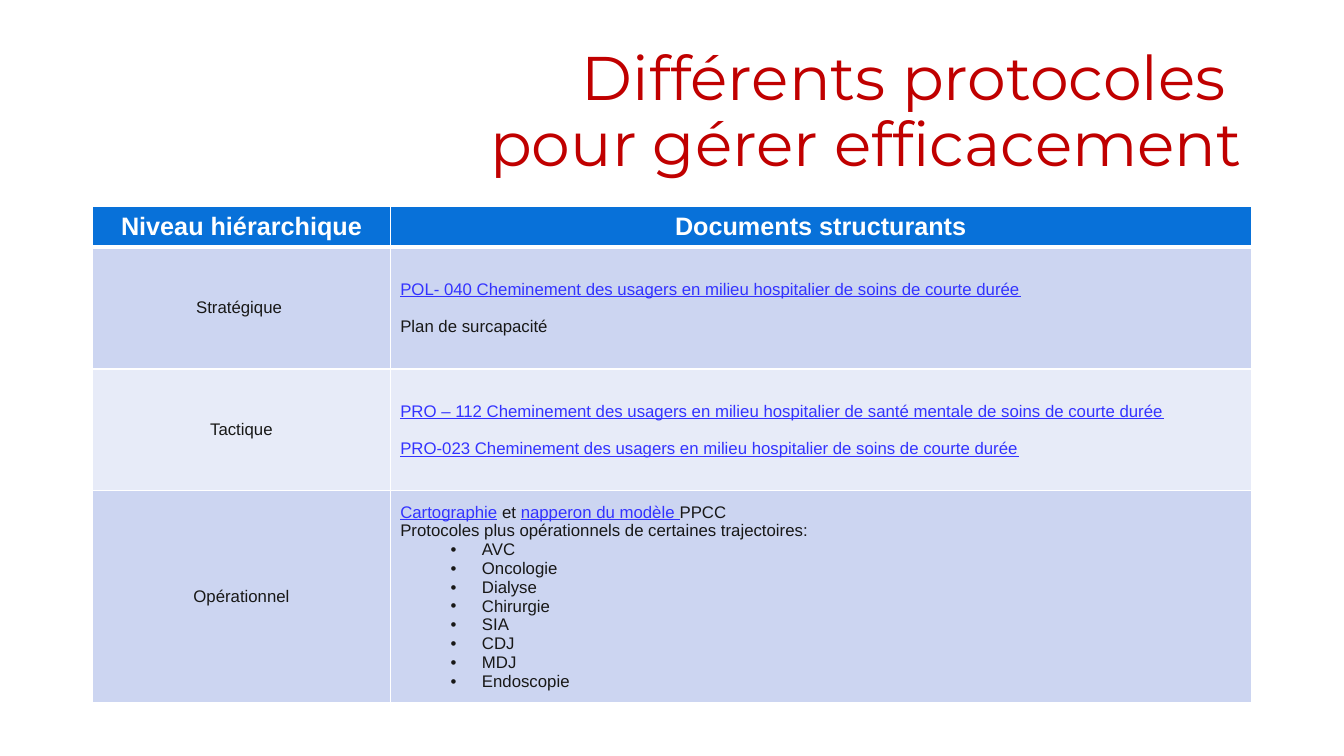
from lxml.etree import SubElement
from pptx import Presentation
from pptx.dml.color import RGBColor
from pptx.enum.text import MSO_ANCHOR as Anchor, PP_ALIGN as Align
from pptx.oxml.ns import qn
from pptx.util import Inches, Pt

HEADER = {"name": "Arial", "size": Pt(18), "bold": True, "color": "FFFFFF"}
BODY = {"name": "Arial", "size": Pt(12), "bold": False, "color": "181817"}
LINK = {**BODY, "color": "3333FF", "underline": True}
TITLE = {"name": "Montserrat", "size": Pt(44), "color": "C00000"}

TRAJECTORIES = ["AVC", "Oncologie", "Dialyse", "Chirurgie",
                "SIA", "CDJ", "MDJ", "Endoscopie"]
LEVELS = [
    ("Stratégique ", "CCD5F1", [
        [("POL- 040 Cheminement des usagers en milieu hospitalier "
          "de soins de courte durée", LINK)],
        [("Plan de surcapacité", BODY)],
    ], Pt(13.4), []),
    ("Tactique", "E7EBF8", [
        [("PRO – 112 Cheminement des usagers en milieu hospitalier "
          "de santé mentale de soins de courte durée", LINK)],
        [("PRO-023 Cheminement des usagers en milieu hospitalier "
          "de soins de courte durée", LINK)],
    ], Pt(13.4), []),
    ("Opérationnel", "CCD5F1", [
        [("Cartographie", LINK), (" et ", BODY),
         ("napperon du modèle ", LINK), ("PPCC", BODY)],
        [("Protocoles plus opérationnels de certaines trajectoires:", BODY)],
    ], Pt(0), TRAJECTORIES),
]


def color(value):
    return RGBColor.from_string(value)


def set_format(font, values):
    for key, value in values.items():
        if key == "color":
            font.color.rgb = color(value)
        else:
            setattr(font, key, value)


def write(para, spans):
    for text, values in spans:
        span = para.add_run()
        span.text = text
        set_format(span.font, values)


def next_paragraph(frame):
    first = frame.paragraphs[0]
    return frame.add_paragraph() if first.runs else first


def add_bullet(para):
    para.level = 1
    properties = para._p.get_or_add_pPr()
    properties.set("marL", str(Inches(0.81)))
    properties.set("indent", str(Inches(-0.31)))
    SubElement(properties, qn("a:buFont"), typeface="Arial")
    SubElement(properties, qn("a:buChar"), char="•")


def style_cell(cell, fill, bottom=1):
    properties = cell._tc.get_or_add_tcPr()
    for side, width in (("L", 1), ("R", 1), ("T", 1), ("B", bottom)):
        line = SubElement(properties, qn(f"a:ln{side}"), w=str(Pt(width)))
        solid = SubElement(line, qn("a:solidFill"))
        SubElement(solid, qn("a:srgbClr"), val="FFFFFF")
    cell.fill.solid()
    cell.fill.fore_color.rgb = color(fill)
    cell.vertical_anchor = Anchor.MIDDLE


def write_centered(cell, text, values):
    para = cell.text_frame.paragraphs[0]
    para.alignment = Align.CENTER
    write(para, [(text, values)])


def write_documents(frame, documents, gap, bullets):
    for number, spans in enumerate(documents):
        para = next_paragraph(frame)
        if number:
            para.space_before = gap
        write(para, spans)
    for bullet in bullets:
        para = next_paragraph(frame)
        add_bullet(para)
        write(para, [(bullet, BODY)])


def add_title(page, left, top, width, height):
    box = page.shapes.add_textbox(left, top, width, height)
    frame = box.text_frame
    frame.word_wrap = True
    frame.vertical_anchor = Anchor.MIDDLE
    para = frame.paragraphs[0]
    para.alignment = Align.RIGHT
    para.line_spacing = 0.9
    write(para, [("Différents protocoles ", TITLE)])
    para.add_line_break()
    write(para, [("pour gérer efficacement", TITLE)])


def add_levels_table(page, left, top, width, height):
    table = page.shapes.add_table(len(LEVELS) + 1, 2, left, top, width, height).table
    table.columns[0].width = Inches(2.95)
    table.columns[1].width = width - Inches(2.95)
    for row, size in zip(table.rows, (0.38, 1.21, 1.21, 1.96)):
        row.height = Inches(size)

    for column, text in enumerate(("Niveau hiérarchique", "Documents structurants")):
        cell = table.cell(0, column)
        style_cell(cell, "0871D9", bottom=3)
        write_centered(cell, text, HEADER)

    for row, (level, fill, documents, gap, bullets) in enumerate(LEVELS, 1):
        for column in range(2):
            style_cell(table.cell(row, column), fill)
        write_centered(table.cell(row, 0), level, BODY)
        write_documents(table.cell(row, 1).text_frame, documents, gap, bullets)


def main():
    deck = Presentation()
    deck.slide_width = Inches(13.33)
    deck.slide_height = Inches(7.5)
    page = deck.slides.add_slide(deck.slide_layouts[6])
    add_title(page, Inches(2.75), Inches(0.4), Inches(9.67), Inches(1.45))
    add_levels_table(page, Inches(0.92), Inches(2.05), Inches(11.49), Inches(4.76))
    deck.save("out.pptx")


if __name__ == "__main__":
    main()
